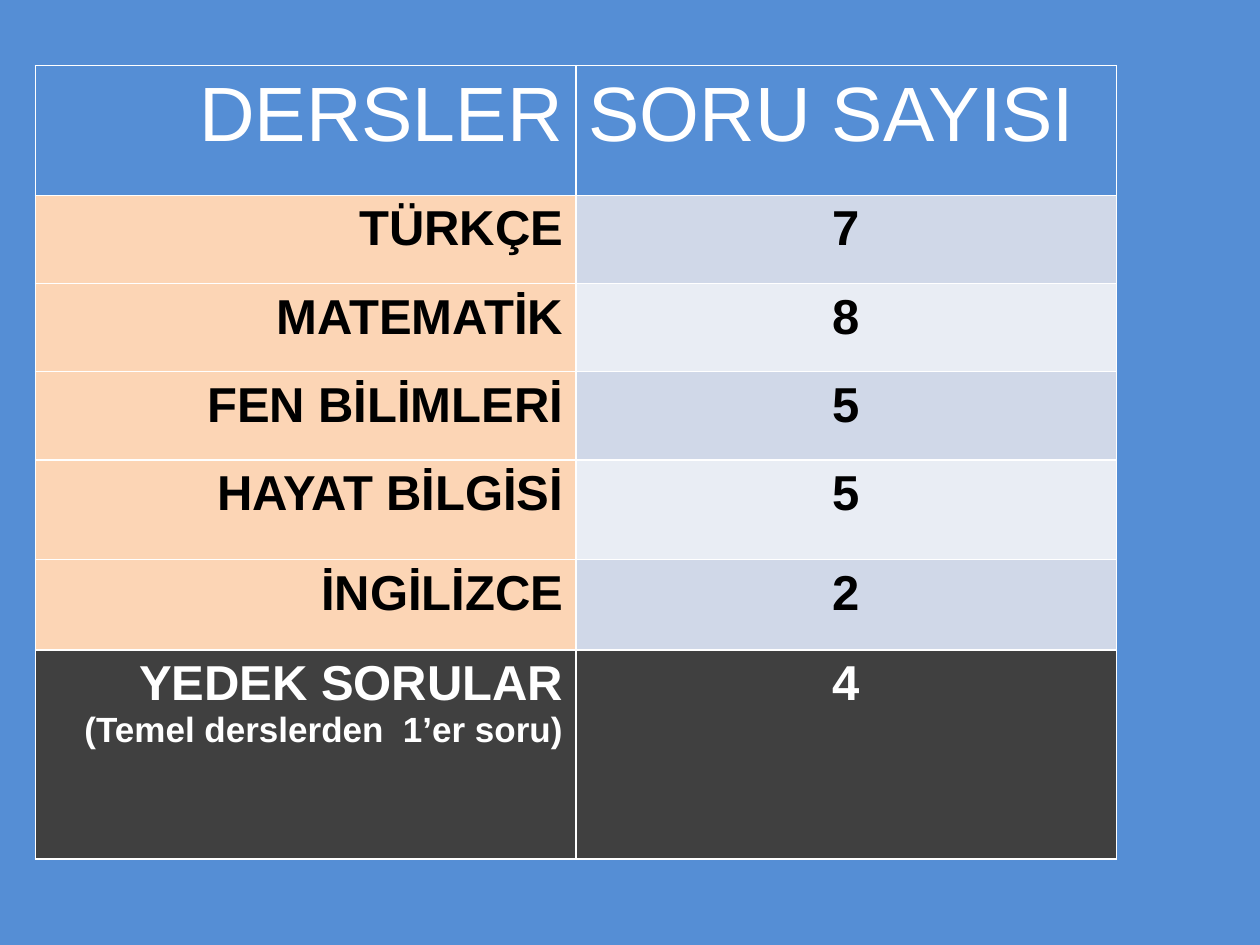
from dataclasses import dataclass

from lxml.etree import SubElement
from pptx import Presentation
from pptx.dml.color import RGBColor
from pptx.enum.text import PP_ALIGN
from pptx.oxml.ns import qn
from pptx.util import Inches, Pt


@dataclass(frozen=True)
class Theme:
    font: str = "Arial"
    blue: str = "558ED5"
    peach: str = "FCD5B5"
    bands: tuple = ("D0D8E8", "E9EDF4")
    dark: str = "404040"
    white: str = "FFFFFF"
    black: str = "000000"
    header_size: int = 44
    body_size: int = 28
    note_size: int = 20
    border_width: int = 1


class SlideBuilder:
    def __init__(self, prs, theme):
        self.theme = theme
        self.s = prs.slides.add_slide(prs.slide_layouts[6])

    def background(self, color):
        fill = self.s.background.fill
        fill.solid()
        fill.fore_color.rgb = RGBColor.from_string(color)

    def table(self, left, top, widths, heights):
        box = (left, top, sum(widths), sum(heights))
        frame = self.s.shapes.add_table(len(heights), len(widths), *map(Inches, box))
        table = frame.table
        for column, width in zip(table.columns, widths):
            column.width = Inches(width)
        for row, height in zip(table.rows, heights):
            row.height = Inches(height)
        return table

    def borders(self, cell):
        tc_pr = cell._tc.get_or_add_tcPr()
        for side in ("lnL", "lnR", "lnT", "lnB"):
            ln = SubElement(tc_pr, qn(f"a:{side}"), w=str(Pt(self.theme.border_width)))
            SubElement(SubElement(ln, qn("a:solidFill")), qn("a:srgbClr"), val=self.theme.white)

    def cell(self, cell, lines, fill, color, align, bold=True):
        """Fill one cell with (text, size) lines, one paragraph each."""
        self.borders(cell)
        cell.fill.solid()
        cell.fill.fore_color.rgb = RGBColor.from_string(fill)
        tf = cell.text_frame
        for i, (text, size) in enumerate(lines):
            p = tf.paragraphs[0] if i == 0 else tf.add_paragraph()
            p.alignment = align
            r = p.add_run()
            r.text = text
            formats = {"name": self.theme.font, "size": Pt(size), "bold": bold}
            for name, value in formats.items():
                setattr(r.font, name, value)
            r.font.color.rgb = RGBColor.from_string(color)


def main():
    prs = Presentation()
    prs.slide_width, prs.slide_height = Inches(10), Inches(7.5)
    theme = Theme()
    slide = SlideBuilder(prs, theme)
    slide.background(theme.blue)

    lessons = [("TÜRKÇE", "7"), ("MATEMATİK", "8"), ("FEN BİLİMLERİ", "5"),
               ("HAYAT BİLGİSİ", "5"), ("İNGİLİZCE", "2")]
    table = slide.table(0.28, 0.52, [4.29] * 2, [1.03, 0.7, 0.7, 0.7, 0.79, 0.72, 1.66])

    headers = [("DERSLER", PP_ALIGN.RIGHT), ("SORU SAYISI", PP_ALIGN.LEFT)]
    for col, (text, align) in enumerate(headers):
        slide.cell(table.cell(0, col), [(text, theme.header_size)],
                   theme.blue, theme.white, align, bold=False)

    for row, (lesson, count) in enumerate(lessons, start=1):
        band = theme.bands[(row - 1) % 2]
        slide.cell(table.cell(row, 0), [(lesson, theme.body_size)],
                   theme.peach, theme.black, PP_ALIGN.RIGHT)
        slide.cell(table.cell(row, 1), [(count, theme.body_size)],
                   band, theme.black, PP_ALIGN.CENTER)

    last = len(lessons) + 1
    spare = [("YEDEK SORULAR", theme.body_size),
             ("(Temel derslerden  1’er soru)", theme.note_size)]
    slide.cell(table.cell(last, 0), spare, theme.dark, theme.white, PP_ALIGN.RIGHT)
    slide.cell(table.cell(last, 1), [("4", theme.body_size)],
               theme.dark, theme.white, PP_ALIGN.CENTER)

    prs.save("out.pptx")


if __name__ == "__main__":
    main()
